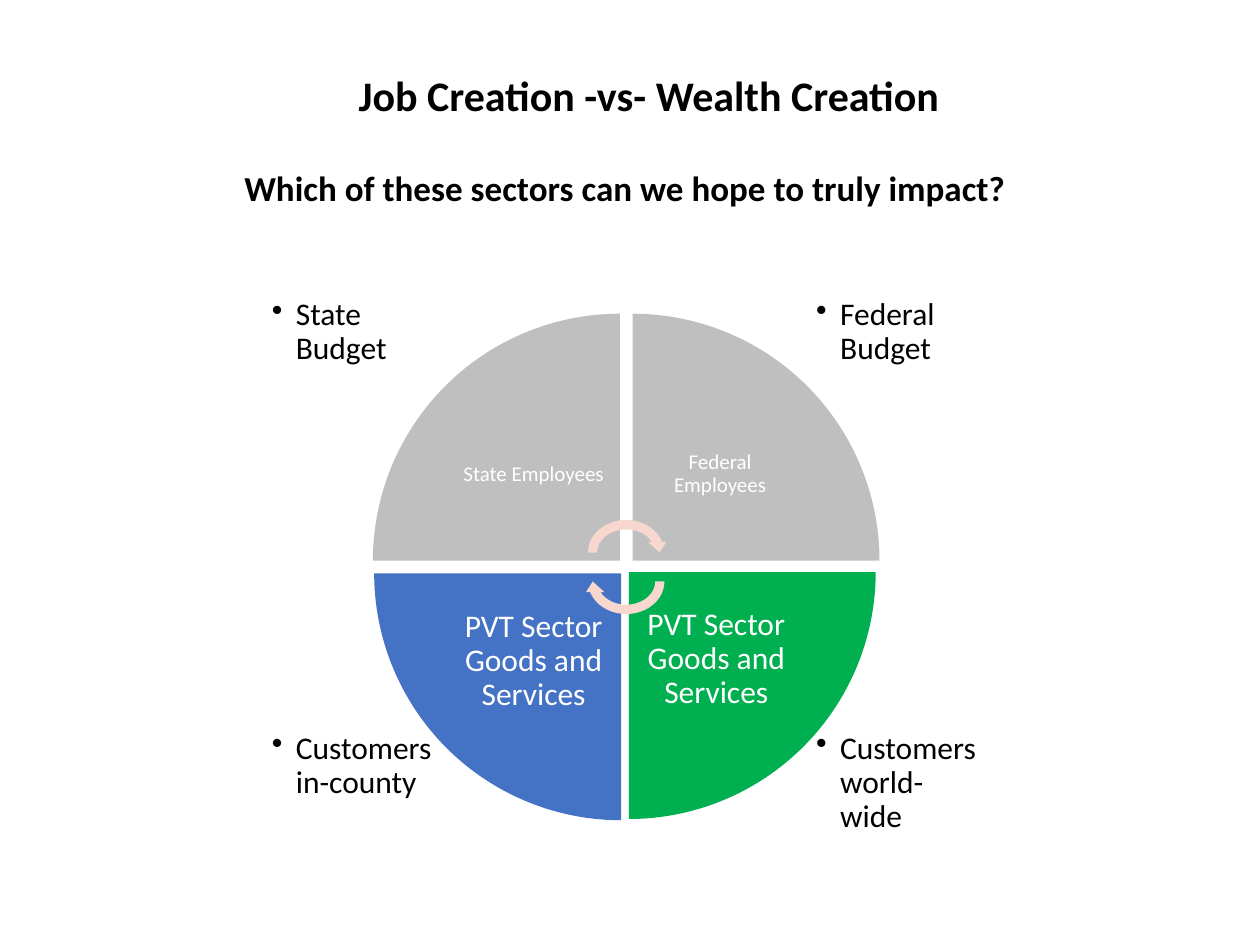
from lxml.etree import SubElement
from pptx import Presentation
from pptx.dml.color import RGBColor
from pptx.enum.shapes import MSO_SHAPE
from pptx.enum.text import MSO_ANCHOR, MSO_AUTO_SIZE, PP_ALIGN
from pptx.oxml.ns import qn
from pptx.util import Inches, Pt

BLACK = RGBColor(0x00, 0x00, 0x00)
WHITE = RGBColor(0xFF, 0xFF, 0xFF)
GREY = RGBColor(0xBF, 0xBF, 0xBF)
GREEN = RGBColor(0x00, 0xB0, 0x50)
BLUE = RGBColor(0x44, 0x72, 0xC4)
PINK = RGBColor(0xF8, 0xD7, 0xCE)

deck = Presentation()
deck.slide_width, deck.slide_height = Inches(10), Inches(7.5)
slide = deck.slides.add_slide(deck.slide_layouts[6])


def add_form(kind, x, y, w, h, turn, fill):
    form = slide.shapes.add_shape(kind, Inches(x), Inches(y), Inches(w), Inches(h))
    form.rotation = turn
    form.shadow.inherit = False
    form.fill.solid()
    form.fill.fore_color.rgb = fill
    form.line.fill.background()


def add_text(text, x, y, w, h, size, color, inset=None, bold=False):
    box = slide.shapes.add_textbox(Inches(x), Inches(y), Inches(w), Inches(h))
    frame = box.text_frame
    frame.word_wrap = True
    para = frame.paragraphs[0]
    if inset:
        frame.margin_left = frame.margin_right = Inches(inset)
        frame.margin_top = frame.margin_bottom = Inches(inset)
        para.line_spacing = 0.9
    run = para.add_run()
    run.text = text
    run.font.name = "Calibri"
    run.font.size = Pt(size)
    run.font.bold = bold
    run.font.color.rgb = color
    return frame


notes = [
    ("Customers world-wide", 6.38, 5.71),
    ("Customers in-county", 2.06, 5.71),
    ("Federal Budget", 6.38, 2.27),
    ("State Budget", 2.06, 2.27),
]
for text, x, y in notes:
    frame = add_text(text, x, y, 1.5, 1.02, 18, BLACK, 0.1)
    props = frame.paragraphs[0]._p.get_or_add_pPr()
    props.set("marL", str(Inches(0.19)))
    props.set("indent", str(-Inches(0.19)))
    SubElement(props, qn("a:buChar")).set("char", "•")

goods = "PVT Sector Goods and Services"
wedges = [
    ("State Employees", 2.96, 2.49, 0, GREY, 3.54, 3.07, 12, 0.09),
    ("Federal Employees", 5.02, 2.49, 90, GREY, 5.02, 3.07, 12, 0.09),
    (goods, 4.99, 4.54, 180, GREEN, 4.99, 4.54, 18, 0.14),
    (goods, 2.97, 4.55, 270, BLUE, 3.54, 4.55, 18, 0.14),
]
for text, x, y, turn, fill, left, top, size, inset in wedges:
    add_form(MSO_SHAPE.PIE_WEDGE, x, y, 1.96, 1.96, turn, fill)
    frame = add_text(text, left, top, 1.39, 1.39, size, WHITE, inset)
    frame.vertical_anchor = MSO_ANCHOR.MIDDLE
    frame.paragraphs[0].alignment = PP_ALIGN.CENTER

for y, turn in [(4.09, 0), (4.32, 180)]:
    add_form(MSO_SHAPE.CIRCULAR_ARROW, 4.63, y, 0.68, 0.59, turn, PINK)

title = add_text("Job Creation -vs- Wealth Creation", 2.7, 0.5, 4.9, 0.5, 24, BLACK, bold=True)
title.word_wrap = False
title.auto_size = MSO_AUTO_SIZE.SHAPE_TO_FIT_TEXT
title.paragraphs[0].alignment = PP_ALIGN.CENTER

lead = "Which of these sectors can we hope to truly impact?"
query = add_text(lead, 1.84, 1.27, 6.55, 0.44, 20, BLACK, bold=True)
query.auto_size = MSO_AUTO_SIZE.SHAPE_TO_FIT_TEXT

deck.save("out.pptx")
